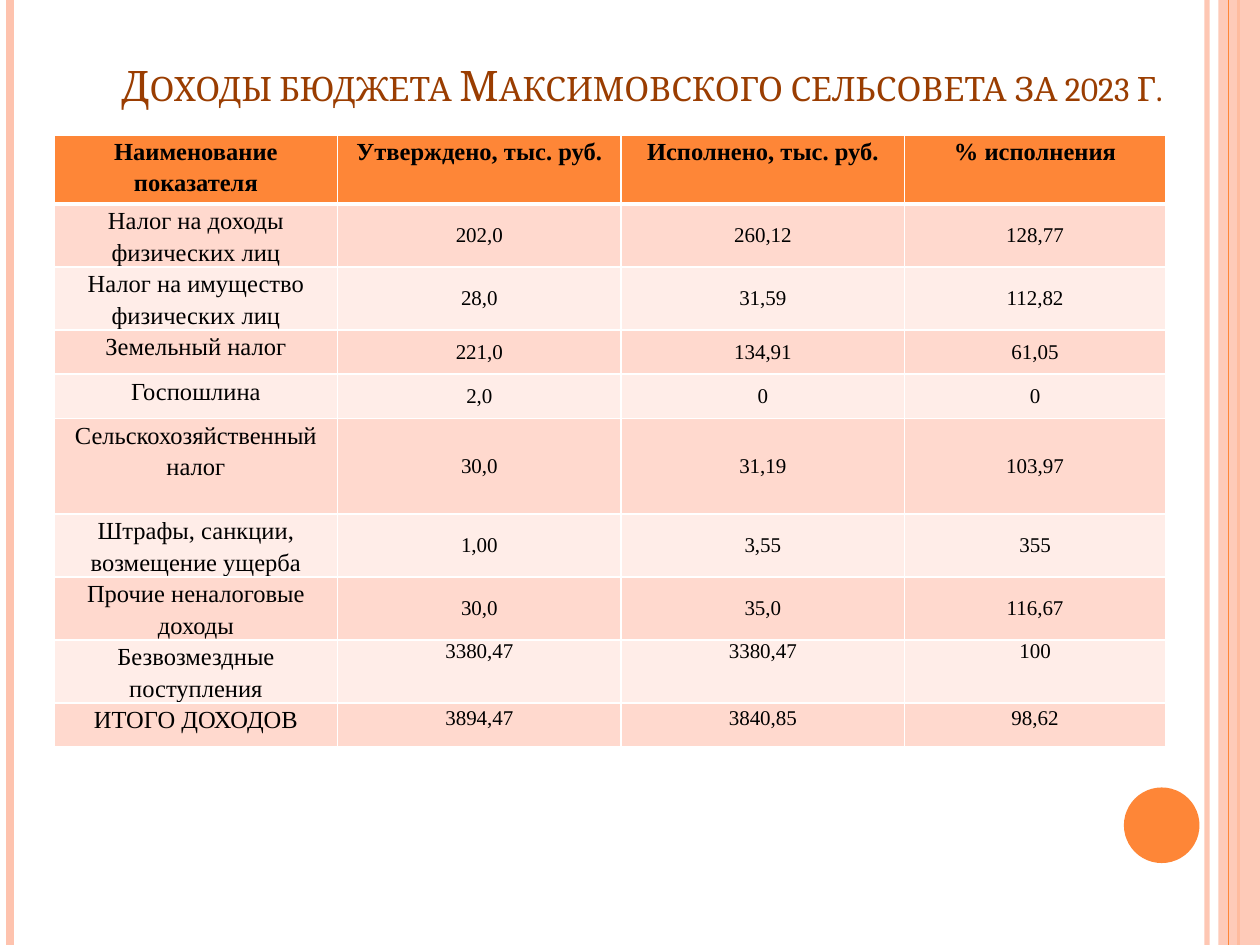
import dataclasses
import pptx
import pptx.dml.color
import pptx.enum.shapes
import pptx.enum.text
import pptx.oxml
import pptx.oxml.ns
import pptx.util
import lxml.etree

Inches = pptx.util.Inches
Pt = pptx.util.Pt
Anchor = pptx.enum.text.MSO_ANCHOR
Shape = pptx.enum.shapes.MSO_SHAPE
qn = pptx.oxml.ns.qn

ORANGE, PEACH, WHITE = "FE8637", "FEC3AE", "FFFFFF"
BANDS = ("FFD9CE", "FFEDE8")
SERIF = "Times New Roman"


@dataclasses.dataclass
class Stripe:
    x: float
    width: float
    color: str
    alpha: int = 100


@dataclasses.dataclass
class Row:
    height: float
    name: str
    values: tuple
    middle: bool = True
    space: float = 1.0


STRIPES = (
    Stripe(9.58, 3, PEACH, 93),
    Stripe(0.08, 4.5, PEACH),
    Stripe(9.83, 1.5, ORANGE),
    Stripe(9.75, 0.75, ORANGE),
)
HEADS = ("Наименование показателя", "Утверждено, тыс. руб.", "Исполнено, тыс. руб.", "% исполнения")
WIDTHS = (2.25, 2.25, 2.25, 2.07)
ROWS = (
    Row(0.5, "Налог на доходы физических лиц", ("202,0", "260,12", "128,77")),
    Row(0.5, "Налог на имущество физических лиц", ("28,0", "31,59", "112,82")),
    Row(0.35, "Земельный налог", ("221,0", "134,91", "61,05")),
    Row(0.35, "Госпошлина", ("2,0", "0", "0")),
    Row(0.76, "Сельскохозяйственный налог", ("30,0", "31,19", "103,97")),
    Row(0.5, "Штрафы, санкции, возмещение ущерба", ("1,00", "3,55", "355")),
    Row(0.5, "Прочие неналоговые доходы", ("30,0", "35,0", "116,67")),
    Row(0.5, "Безвозмездные поступления", ("3380,47", "3380,47", "100"), False),
    Row(0.35, "ИТОГО ДОХОДОВ", ("3894,47", "3840,85", "98,62"), False, 1.15),
)


def paint(fill, color: str, alpha: int = 100) -> None:
    fill.solid()
    fill.fore_color.rgb = pptx.dml.color.RGBColor.from_string(color)
    if alpha < 100:
        tone = fill._xPr.find(".//" + qn("a:srgbClr"))
        lxml.etree.SubElement(tone, qn("a:alpha")).set("val", str(alpha * 1000))


def put(frame, text: str, *, size: float, font: str = SERIF, color: str = "000000",
        bold: bool = False, space: float = 1.0, caps: bool = False) -> None:
    para = frame.paragraphs[0]
    para.alignment = pptx.enum.text.PP_ALIGN.CENTER
    para.line_spacing = space
    run = para.add_run()
    run.text = text
    run.font.size, run.font.name, run.font.bold = Pt(size), font, bold
    paint(run.font.fill, color)
    if caps:
        run.font._element.set("cap", "small")


def draw_line(slide, item: Stripe) -> None:
    line = slide.shapes.add_connector(
        pptx.enum.shapes.MSO_CONNECTOR.STRAIGHT,
        Inches(item.x), 0, Inches(item.x), Inches(7.5))
    line.line.width = Pt(item.width)
    paint(line.line.fill, item.color, item.alpha)
    lxml.etree.SubElement(line._element.spPr, qn("a:effectLst"))


def draw_shape(slide, kind, box: tuple, color: str, alpha: int = 100) -> None:
    shape = slide.shapes.add_shape(kind, *map(Inches, box))
    shape.shadow.inherit = False
    paint(shape.fill, color, alpha)
    shape.line.fill.background()


def edge(cell, widths: dict) -> None:
    props = cell._tc.get_or_add_tcPr()
    for spot, side in enumerate("LRTB"):
        props.insert(spot, pptx.oxml.parse_xml(
            f'<a:ln{side} xmlns:a="http://schemas.openxmlformats.org/drawingml/2006/main" '
            f'w="{Pt(widths.get(side, 1))}"><a:solidFill><a:srgbClr val="{WHITE}"/>'
            f'</a:solidFill></a:ln{side}>'))


def fill_cell(cell, text: str, color: str, *, middle: bool = False,
              widths: dict, **style) -> None:
    pad = Inches(0 if middle else 0.07)
    cell.margin_left = cell.margin_right = pad
    cell.margin_top = cell.margin_bottom = 0
    cell.vertical_anchor = Anchor.MIDDLE if middle else Anchor.TOP
    put(cell.text_frame, text, **style)
    paint(cell.fill, color)
    edge(cell, widths)


def draw_table(slide) -> None:
    tall = [0.55] + [row.height for row in ROWS]
    table = slide.shapes.add_table(
        len(tall), len(WIDTHS), Inches(0.43), Inches(1.07),
        Inches(sum(WIDTHS)), Inches(sum(tall))).table
    for col, width in zip(table.columns, WIDTHS):
        col.width = Inches(width)
    for line, height in zip(table.rows, tall):
        line.height = Inches(height)
    for c, text in enumerate(HEADS):
        fill_cell(table.cell(0, c), text, ORANGE, widths={"B": 3},
                  size=14, bold=True, space=1.15)
    for r, row in enumerate(ROWS, 1):
        band = BANDS[(r - 1) % 2]
        widths = {"T": 3} if r == 1 else {}
        fill_cell(table.cell(r, 0), row.name, band, widths=widths, size=14, space=1.15)
        for c, text in enumerate(row.values, 1):
            fill_cell(table.cell(r, c), text, band, middle=row.middle,
                      widths=widths, size=12, space=row.space)


def draw_title(slide) -> None:
    title = slide.shapes.title
    title.left, title.top, title.width, title.height = map(Inches, (0.5, 0.35, 9.19, 0.57))
    title.text_frame.vertical_anchor = Anchor.BOTTOM
    title.text_frame.word_wrap = True
    put(title.text_frame, "Доходы бюджета Максимовского сельсовета за 2023 г.",
        size=24, font="Cambria", color="9A3D01", caps=True)


def main() -> None:
    deck = pptx.Presentation()
    deck.slide_width, deck.slide_height = Inches(10), Inches(7.5)
    slide = deck.slides.add_slide(deck.slide_layouts[5])
    paint(slide.background.fill, WHITE)
    for item in STRIPES[:3]:
        draw_line(slide, item)
    draw_shape(slide, Shape.RECTANGLE, (9.67, 0, 0.33, 7.5), PEACH, 87)
    draw_line(slide, STRIPES[3])
    draw_shape(slide, Shape.OVAL, (8.92, 6.25, 0.6, 0.6), ORANGE)
    draw_title(slide)
    draw_table(slide)
    deck.save("out.pptx")


if __name__ == "__main__":
    main()
